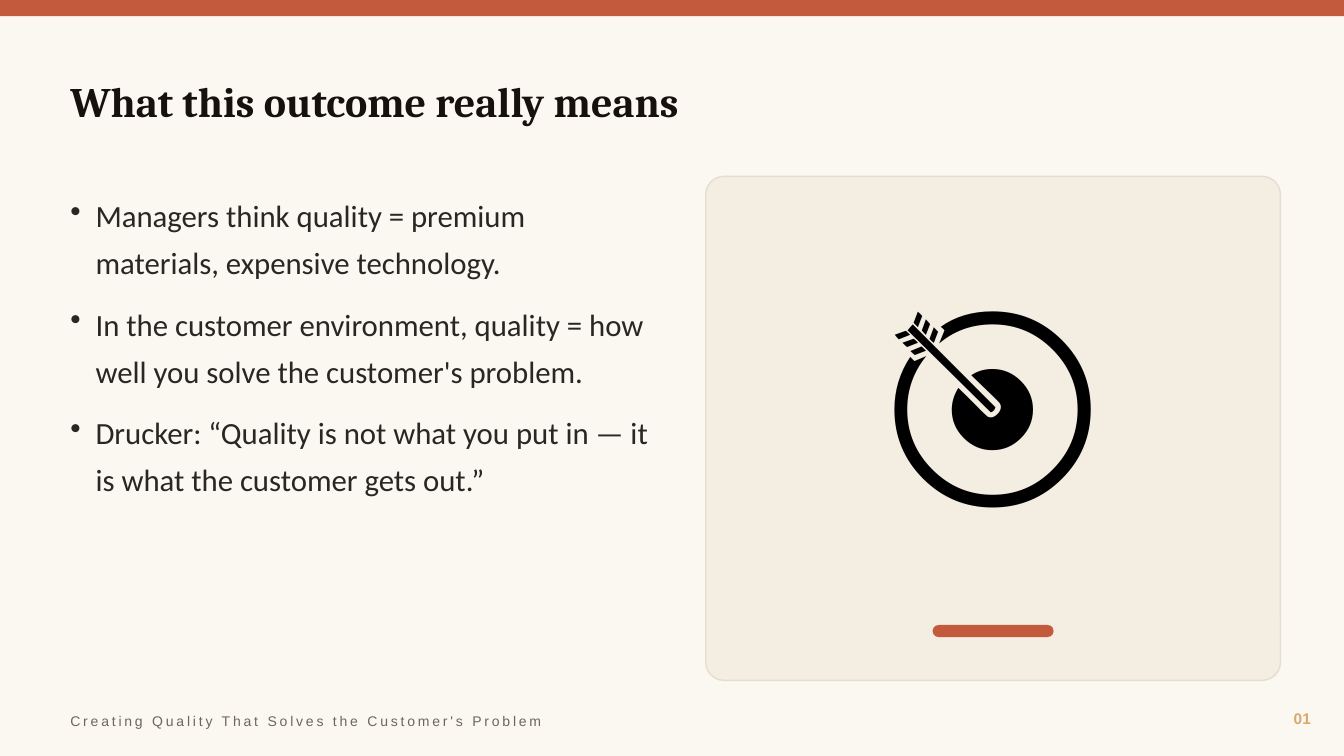
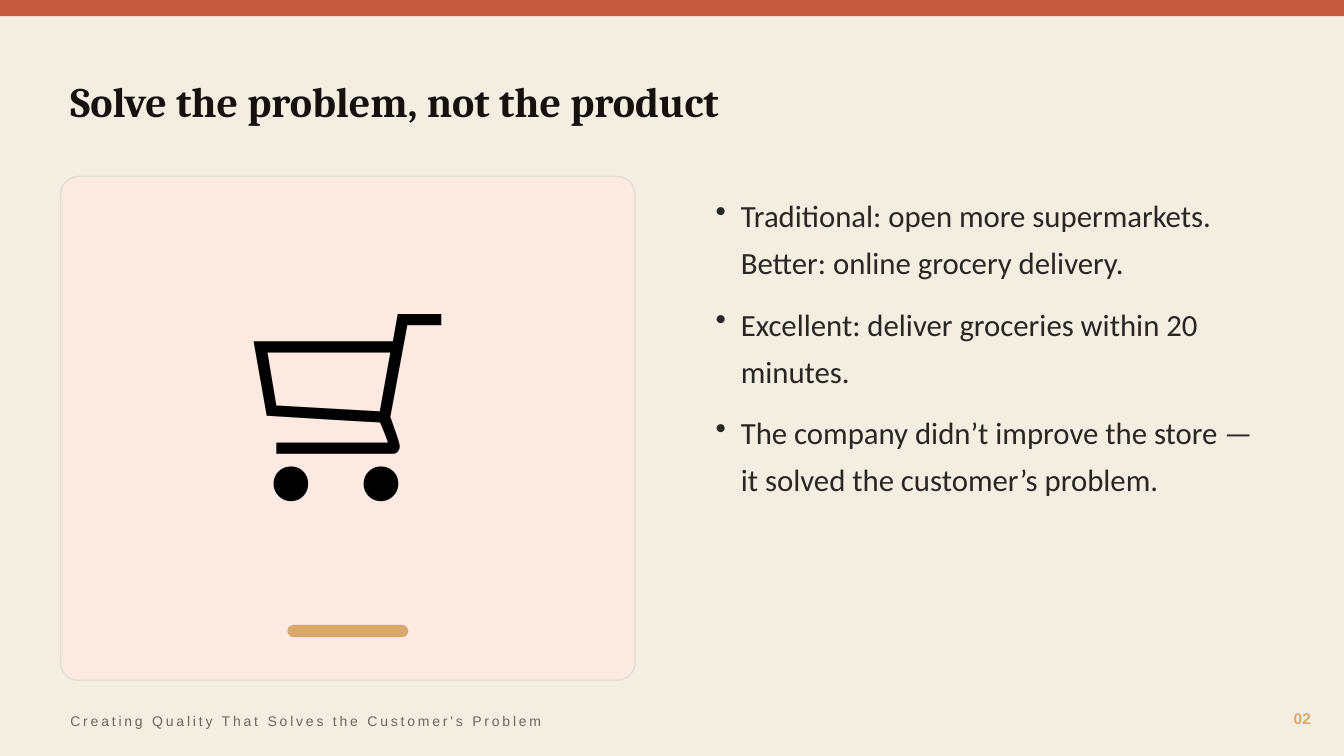
from lxml.etree import SubElement
from pptx import Presentation
from pptx.dml.color import RGBColor
from pptx.enum.shapes import MSO_SHAPE as Shape
from pptx.enum.text import MSO_ANCHOR as Anchor, PP_ALIGN as Align
from pptx.oxml.ns import qn
from pptx.util import Inches, Pt

CREAM = RGBColor(0xFB, 0xF7, 0xF1)
SAND = RGBColor(0xF4, 0xED, 0xE2)
BLUSH = RGBColor(0xFB, 0xE9, 0xE2)
BORDER = RGBColor(0xE4, 0xDD, 0xD0)
RUST = RGBColor(0xC4, 0x5A, 0x3D)
GOLD = RGBColor(0xD9, 0xA8, 0x6C)
INK = RGBColor(0x16, 0x11, 0x0D)
BODY = RGBColor(0x2A, 0x26, 0x22)
MUTED = RGBColor(0x6E, 0x66, 0x5C)
BLACK = RGBColor(0, 0, 0)

PAGE_WIDTH, PAGE_HEIGHT = 13.33, 7.5
LEFT_COLUMN, RIGHT_COLUMN = 0.6, 7
CARD_TOP, CARD_WIDTH, CARD_HEIGHT = 1.75, 5.7, 5
ACCENT_WIDTH = 1.2
FOOTER = "Creating Quality That Solves the Customer's Problem"


def add_block(page, kind, left, top, width, height, fill, radius=None, line=None):
    block = page.shapes.add_shape(
        kind, Inches(left), Inches(top), Inches(width), Inches(height))
    block.shadow.inherit = False
    block.fill.solid()
    block.fill.fore_color.rgb = fill
    if radius is not None:
        block.adjustments[0] = radius
    if line is None:
        block.line.fill.background()
    else:
        block.line.color.rgb = line
        block.line.width = Pt(1)


def add_text_frame(page, left, top, width, height, anchor=Anchor.MIDDLE):
    box = page.shapes.add_textbox(
        Inches(left), Inches(top), Inches(width), Inches(height))
    frame = box.text_frame
    frame.word_wrap = True
    frame.vertical_anchor = anchor
    return frame


def style(para, name, size, color, bold=False):
    font = para.font
    font.name = name
    font.size = Pt(size)
    font.color.rgb = color
    font.bold = bold


def add_label(page, text, place, name, size, color, bold=False, align=Align.LEFT):
    para = add_text_frame(page, *place).paragraphs[0]
    para.text = text
    para.alignment = align
    style(para, name, size, color, bold)
    return para


def add_bullets(page, left, width, items):
    frame = add_text_frame(page, left, 1.8, width, 5, Anchor.TOP)
    for index, item in enumerate(items):
        para = frame.add_paragraph() if index else frame.paragraphs[0]
        para.text = item
        para.line_spacing = 1.28
        para.space_after = Pt(10)
        properties = para._p.get_or_add_pPr()
        properties.set("marL", str(Inches(0.25)))
        properties.set("indent", str(-Inches(0.25)))
        SubElement(properties, qn("a:buChar")).set("char", "•")
        style(para, "Calibri", 22, BODY)


def add_icon_card(page, left, icon, fill, accent):
    add_block(page, Shape.ROUNDED_RECTANGLE, left, CARD_TOP, CARD_WIDTH,
              CARD_HEIGHT, fill, 0.036, BORDER)
    add_label(page, icon, (left, CARD_TOP, CARD_WIDTH, 4.1), "Calibri", 150,
              BLACK, align=Align.CENTER)
    add_block(page, Shape.ROUNDED_RECTANGLE, left + (CARD_WIDTH - ACCENT_WIDTH) / 2,
              6.2, ACCENT_WIDTH, 0.12, accent, 0.5)


def add_page(deck, title, background):
    page = deck.slides.add_slide(deck.slide_layouts[6])
    page.background.fill.solid()
    page.background.fill.fore_color.rgb = background
    add_block(page, Shape.RECTANGLE, 0, 0, PAGE_WIDTH, 0.16, RUST)
    add_label(page, title, (0.6, 0.5, 12.1, 1), "Cambria", 30, INK, bold=True)
    return page


def add_footer(page, number):
    add_label(page, f"{number:02d}", (12.2, 6.95, 0.9, 0.35), "Arial", 11, GOLD,
              bold=True, align=Align.RIGHT)
    para = add_label(page, FOOTER, (0.6, 7, 8, 0.3), "Arial", 10, MUTED)
    para.runs[0]._r.get_or_add_rPr().set("spc", "200")


def main():
    deck = Presentation()
    deck.slide_width = Inches(PAGE_WIDTH)
    deck.slide_height = Inches(PAGE_HEIGHT)

    page = add_page(deck, "What this outcome really means", CREAM)
    add_icon_card(page, RIGHT_COLUMN, "🎯", SAND, RUST)
    add_bullets(page, LEFT_COLUMN, 6, [
        "Managers think quality = premium materials, expensive technology.",
        "In the customer environment, quality = how well you solve the customer's problem.",
        "Drucker: “Quality is not what you put in — it is what the customer gets out.”",
    ])
    add_footer(page, 1)

    page = add_page(deck, "Solve the problem, not the product", SAND)
    add_icon_card(page, LEFT_COLUMN, "🛒", BLUSH, GOLD)
    add_bullets(page, RIGHT_COLUMN, 5.7, [
        "Traditional: open more supermarkets. Better: online grocery delivery.",
        "Excellent: deliver groceries within 20 minutes.",
        "The company didn’t improve the store — it solved the customer’s problem.",
    ])
    add_footer(page, 2)

    deck.save("out.pptx")


if __name__ == "__main__":
    main()
